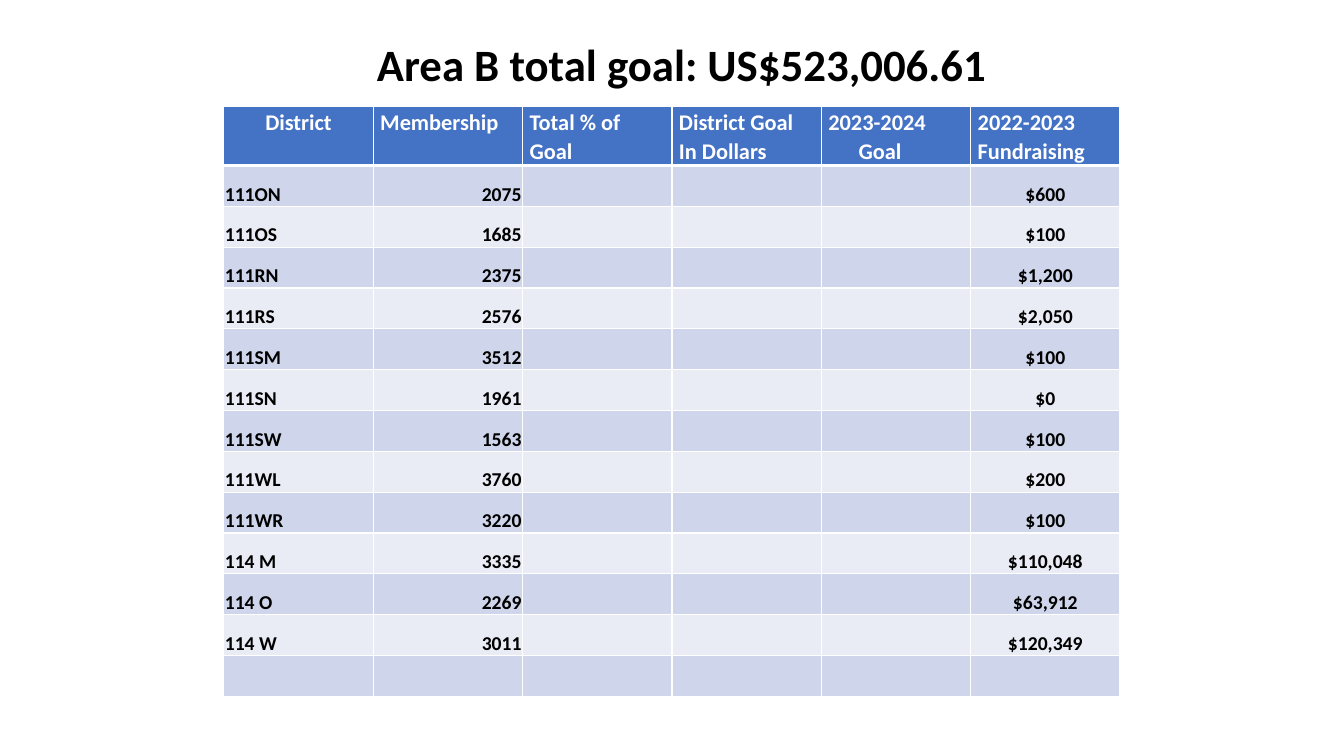
import pptx
import pptx.dml.color
import pptx.enum.text
import pptx.oxml
import pptx.oxml.ns
import pptx.util

RGB = pptx.dml.color.RGBColor
Inches, Pt = pptx.util.Inches, pptx.util.Pt
ALIGN = pptx.enum.text.PP_ALIGN
ANCHOR = pptx.enum.text.MSO_ANCHOR

WHITE = RGB(0xFF, 0xFF, 0xFF)
BLACK = RGB(0, 0, 0)
HEADER_BLUE = RGB(0x44, 0x72, 0xC4)
BANDS = [RGB(0xCF, 0xD5, 0xEA), RGB(0xE9, 0xEB, 0xF5)]
FONT = "Calibri"
HEADER_HEIGHT = 0.56
GOAL_INDENT = 0.3

HEADERS = [["District"], ["Membership"], ["Total % of Goal"],
           ["District Goal In Dollars"], ["2023-2024", "Goal"],
           ["2022-2023", "Fundraising"]]
DISTRICTS = [
    ("111ON", "2075", "$600"),
    ("111OS", "1685", "$100"),
    ("111RN", "2375", "$1,200"),
    ("111RS", "2576", "$2,050"),
    ("111SM", "3512", "$100"),
    ("111SN", "1961", "$0"),
    ("111SW", "1563", "$100"),
    ("111WL", "3760", "$200"),
    ("111WR", "3220", "$100"),
    ("114 M", "3335", "$110,048"),
    ("114 O", "2269", "$63,912"),
    ("114 W", "3011", "$120,349"),
    ("", "", ""),
]


def add_run(p, text, size, color):
    r = p.add_run()
    r.text = text
    r.font.name, r.font.size, r.font.bold = FONT, Pt(size), True
    r.font.color.rgb = color


def style_cell(cell, fill, margins, top_width=1, bottom_width=1):
    tcPr = cell._tc.get_or_add_tcPr()
    # Borders come before the fill in the cell properties
    for side, width in (("L", 1), ("R", 1), ("T", top_width), ("B", bottom_width)):
        tcPr.append(pptx.oxml.parse_xml(
            f'<a:ln{side} {pptx.oxml.ns.nsdecls("a")} w="{Pt(width)}">'
            f'<a:solidFill><a:srgbClr val="{WHITE}"/></a:solidFill></a:ln{side}>'))
    cell.fill.solid()
    cell.fill.fore_color.rgb = fill
    (cell.margin_left, cell.margin_top,
     cell.margin_right, cell.margin_bottom) = [Inches(m) for m in margins]


def add_title(s, left, top, width, height):
    tf = s.shapes.add_textbox(Inches(left), Inches(top),
                              Inches(width), Inches(height)).text_frame
    tf.word_wrap = True
    tf.auto_size = pptx.enum.text.MSO_AUTO_SIZE.SHAPE_TO_FIT_TEXT
    p = tf.paragraphs[0]
    p.line_spacing, p.space_after = 1.07, Pt(8)
    add_run(p, "Area B total goal: US$523,006.61", 32, BLACK)


def add_goal_table(s, left, top, width, height):
    table = s.shapes.add_table(len(DISTRICTS) + 1, len(HEADERS), Inches(left),
                               Inches(top), Inches(width), Inches(height)).table
    for col in table.columns:
        col.width = Inches(width / len(HEADERS))
    for row in table.rows:
        row.height = Inches((height - HEADER_HEIGHT) / len(DISTRICTS))
    table.rows[0].height = Inches(HEADER_HEIGHT)

    # Header row
    for c, lines in enumerate(HEADERS):
        cell = table.cell(0, c)
        style_cell(cell, HEADER_BLUE, (0.07, 0, 0.07, 0), bottom_width=3)
        for i, line in enumerate(lines):
            tf = cell.text_frame
            p = tf.add_paragraph() if i else tf.paragraphs[0]
            p.line_spacing = 1.07
            if line == "District":
                p.alignment = ALIGN.CENTER
            elif line == "Goal":
                p._p.get_or_add_pPr().set("marL", str(Inches(GOAL_INDENT)))
            add_run(p, line, 16, WHITE)

    # District rows: the three goal columns stay empty
    aligns = {0: ALIGN.LEFT, 1: ALIGN.RIGHT, 5: ALIGN.CENTER}
    for n, (district, members, raised) in enumerate(DISTRICTS):
        for c, text in enumerate((district, members, "", "", "", raised)):
            cell = table.cell(n + 1, c)
            style_cell(cell, BANDS[n % 2], (0.01, 0.01, 0.01, 0),
                       top_width=1 if n else 3)
            if text:
                cell.vertical_anchor = ANCHOR.BOTTOM
                p = cell.text_frame.paragraphs[0]
                p.alignment = aligns[c]
                add_run(p, text, 14, BLACK)


def main():
    prs = pptx.Presentation()
    prs.slide_width, prs.slide_height = Inches(13.33), Inches(7.5)
    s = prs.slides.add_slide(prs.slide_layouts[6])
    add_goal_table(s, 2.22, 1.06, 8.89, 5.83)
    add_title(s, 3.64, 0.28, 6.67, 0.65)
    prs.save("out.pptx")


if __name__ == "__main__":
    main()
